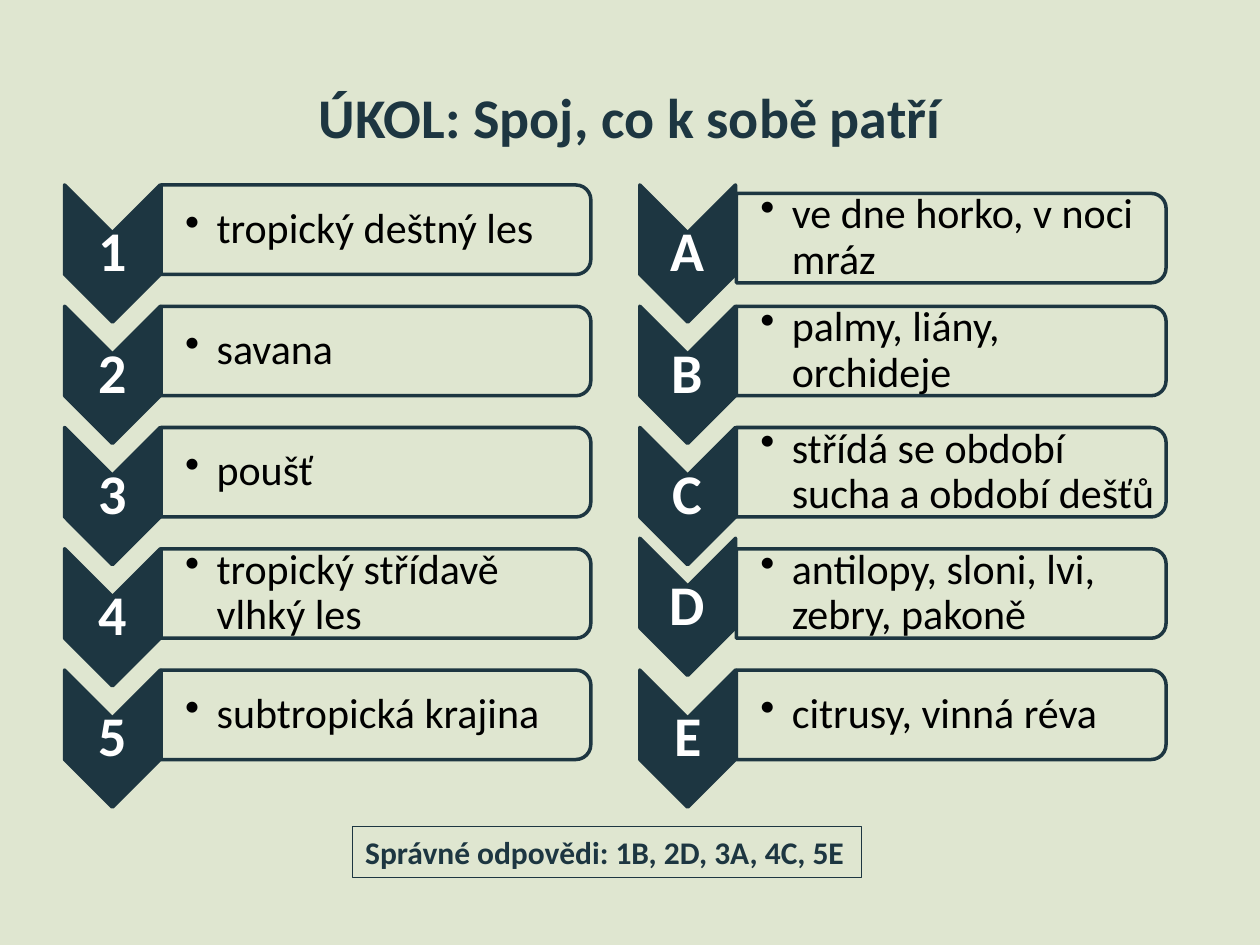
from dataclasses import dataclass

from lxml.etree import SubElement
from pptx import Presentation
from pptx.dml.color import RGBColor
from pptx.enum.shapes import MSO_SHAPE
from pptx.enum.text import MSO_ANCHOR, MSO_AUTO_SIZE, PP_ALIGN
from pptx.oxml.ns import qn
from pptx.util import Pt


@dataclass(frozen=True)
class Theme:
    font: str = "Calibri"
    background: RGBColor = RGBColor(0xDF, 0xE6, 0xD0)
    dark: RGBColor = RGBColor(0x1D, 0x36, 0x41)
    body: RGBColor = RGBColor(0, 0, 0)
    light: RGBColor = RGBColor(0xFF, 0xFF, 0xFF)
    title_size: int = 32
    label_size: int = 32
    body_size: int = 24
    answer_size: int = 18
    outline: float = 2
    thin_outline: float = 0.75
    panel_opacity: int = 90


class SlideBuilder:
    def __init__(self, page, theme):
        self.page = page
        self.theme = theme
        fill = page.background.fill
        fill.solid()
        fill.fore_color.rgb = theme.background

    def span(self, para, text, size, color, bold=False):
        span = para.add_run()
        span.text = text
        span.font.name = self.theme.font
        span.font.size = Pt(size)
        span.font.bold = bold
        span.font.color.rgb = color

    def title(self, text, left, top, width, height):
        box = self.page.shapes.title
        box.left, box.top, box.width, box.height = map(Pt, (left, top, width, height))
        box.text_frame.vertical_anchor = MSO_ANCHOR.MIDDLE
        para = box.text_frame.paragraphs[0]
        para.alignment = PP_ALIGN.CENTER
        self.span(para, text, self.theme.title_size, self.theme.dark, bold=True)

    def turned_shape(self, group, kind, left, top, width, height, color):
        """Add a shape turned by 90 degrees; the frame is the one seen after turning."""
        shift = (width - height) / 2
        shape = group.shapes.add_shape(
            kind, Pt(left + shift), Pt(top - shift), Pt(height), Pt(width))
        shape.rotation = 90
        shape.shadow.inherit = False
        shape.fill.solid()
        shape.fill.fore_color.rgb = color
        shape.line.color.rgb = self.theme.dark
        shape.line.width = Pt(self.theme.outline)
        return shape

    def text_box(self, group, left, top, width, height, inset):
        box = group.shapes.add_textbox(Pt(left), Pt(top), Pt(width), Pt(height))
        frame = box.text_frame
        frame.word_wrap = True
        frame.vertical_anchor = MSO_ANCHOR.MIDDLE
        frame.margin_left = Pt(inset)
        frame.margin_top = frame.margin_right = frame.margin_bottom = Pt(1.5)
        para = frame.paragraphs[0]
        para.line_spacing = 0.9
        return para

    def chevron(self, group, label, left, top):
        width, height, text_height = 54.7, 78.4, 24
        self.turned_shape(group, MSO_SHAPE.CHEVRON, left, top, width, height,
                          self.theme.dark)
        para = self.text_box(group, left, top + (height - text_height) / 2,
                             width, text_height, 1.5)
        para.alignment = PP_ALIGN.CENTER
        self.span(para, label, self.theme.label_size, self.theme.light, bold=True)

    def panel(self, group, text, left, top):
        width, height, text_height = 245.5, 51.1, 46.1
        shape = self.turned_shape(group, MSO_SHAPE.ROUND_2_SAME_RECTANGLE,
                                  left, top, width, height, self.theme.background)
        color = shape.fill._xPr.find(qn("a:solidFill"))[0]
        SubElement(color, qn("a:alpha"), val=str(self.theme.panel_opacity * 1000))
        para = self.text_box(group, left, top + (height - text_height) / 2,
                             width - 2.4, text_height, 13.7)
        properties = para._p.get_or_add_pPr()
        properties.set("marL", str(Pt(18)))
        properties.set("indent", str(Pt(-18)))
        properties.set("lvl", "1")
        SubElement(properties, qn("a:buChar"), char="•")
        self.span(para, text, self.theme.body_size, self.theme.body)

    def column(self, rows, left, top, pitch):
        """Add chevron and panel rows; each row ends with its two vertical shifts."""
        group = self.page.shapes.add_group_shape()
        for index, (label, text, chevron_shift, panel_shift) in enumerate(rows):
            row_top = top + index * pitch
            self.chevron(group, label, left, row_top + chevron_shift)
            self.panel(group, text, left + 55.2, row_top + panel_shift)

    def answer(self, text, left, top, width, height):
        box = self.page.shapes.add_textbox(Pt(left), Pt(top), Pt(width), Pt(height))
        box.line.color.rgb = self.theme.dark
        box.line.width = Pt(self.theme.thin_outline)
        box.text_frame.word_wrap = False
        box.text_frame.auto_size = MSO_AUTO_SIZE.SHAPE_TO_FIT_TEXT
        self.span(box.text_frame.paragraphs[0], text, self.theme.answer_size,
                  self.theme.dark, bold=True)


BIOMES = [
    ("1", "tropický deštný les", 0, 0),
    ("2", "savana", 0, 0),
    ("3", "poušť", 0, 0),
    ("4", "tropický střídavě vlhký les", 0, 0),
    ("5", "subtropická krajina", 0, 0),
]
FEATURES = [
    ("A", "ve dne horko, v noci mráz", 0, 4.8),
    ("B", "palmy, liány, orchideje", 0, 0),
    ("C", "střídá se období sucha a období dešťů", 0, 0),
    ("D", "antilopy, sloni, lvi, zebry, pakoně", -6, 0),
    ("E", "citrusy, vinná réva", 0, 0),
]


def main():
    deck = Presentation()
    deck.slide_width, deck.slide_height = Pt(720), Pt(540)
    builder = SlideBuilder(deck.slides.add_slide(deck.slide_layouts[5]), Theme())
    builder.title("ÚKOL: Spoj, co k sobě patří", 36, 21.6, 648, 90)
    for rows, left in ((BIOMES, 36.9), (FEATURES, 365.6)):
        builder.column(rows, left, top=105.7, pitch=69.3)
    builder.answer("Správné odpovědi: 1B, 2D, 3A, 4C, 5E", 201.6, 472.3, 290.9, 29)
    deck.save("out.pptx")


if __name__ == "__main__":
    main()
